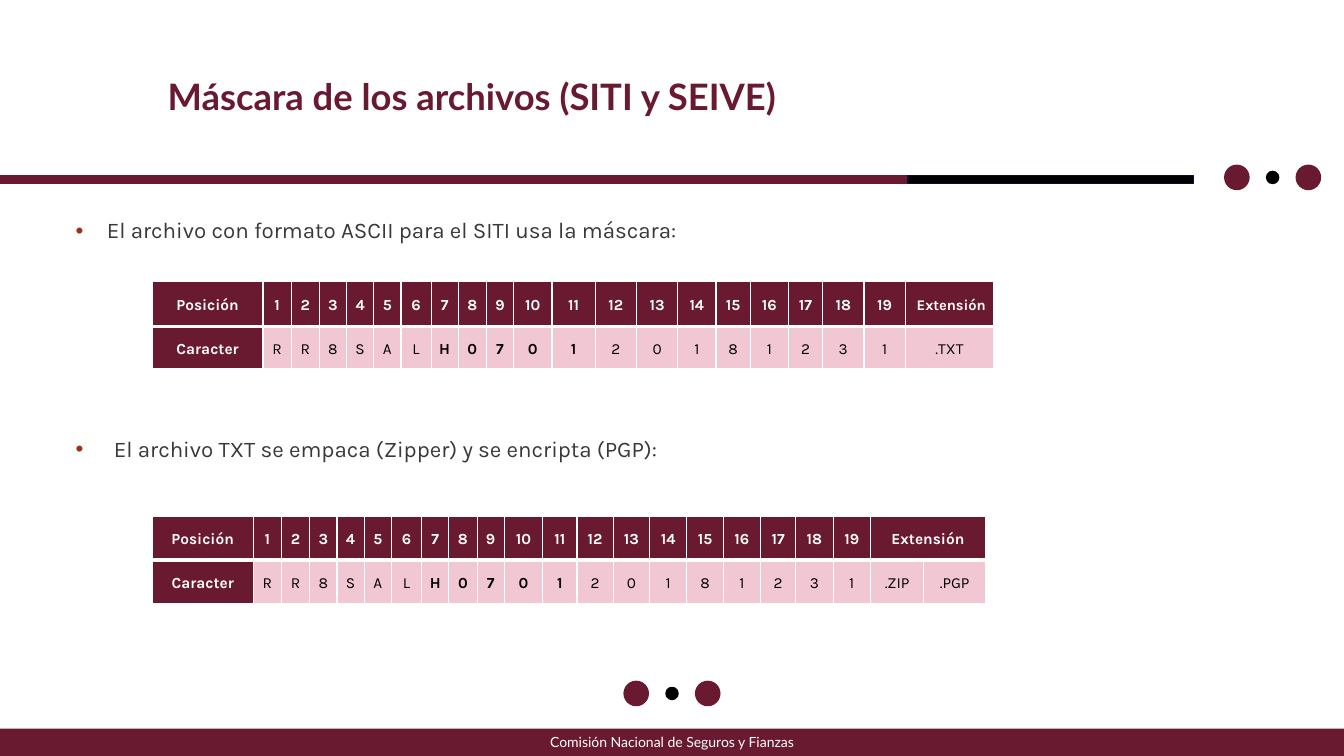
import pptx
import pptx.dml.color
import pptx.enum.shapes
import pptx.enum.text
import pptx.oxml
import pptx.oxml.ns
import pptx.util

WINE = pptx.dml.color.RGBColor(0x69, 0x1A, 0x31)
PINK = pptx.dml.color.RGBColor(0xF1, 0xC7, 0xD3)
RUST = pptx.dml.color.RGBColor(0x9E, 0x30, 0x1A)
GRAY = pptx.dml.color.RGBColor(0x3B, 0x38, 0x38)
NAVY = pptx.dml.color.RGBColor(0x0B, 0x0F, 0x2B)
BLACK = pptx.dml.color.RGBColor(0, 0, 0)
WHITE = pptx.dml.color.RGBColor(255, 255, 255)

Pt = pptx.util.Pt
ALIGN = pptx.enum.text.PP_ALIGN
MIDDLE = pptx.enum.text.MSO_ANCHOR.MIDDLE
RECTANGLE = pptx.enum.shapes.MSO_SHAPE.RECTANGLE
OVAL = pptx.enum.shapes.MSO_SHAPE.OVAL
NAMESPACE = pptx.oxml.ns.nsdecls("a")

presentation = pptx.Presentation()
presentation.slide_width = pptx.util.Inches(13.333)
presentation.slide_height = pptx.util.Inches(7.5)
slide = presentation.slides.add_slide(presentation.slide_layouts[6])


def area(left, top, width, height):
    """Turn percentages of the slide's width and height into lengths."""
    across, down = presentation.slide_width / 100, presentation.slide_height / 100
    return [round(v) for v in (left * across, top * down, width * across, height * down)]


def write(paragraph, text, color, font, layout):
    """Fill a paragraph with one run, given its font and paragraph formats."""
    run = paragraph.add_run()
    run.text = text
    run.font.color.rgb = color
    for target, formats in ((run.font, font), (paragraph, layout)):
        for name, value in formats.items():
            setattr(target, name, value)


# Title
title = slide.shapes.add_textbox(*area(2.18, 7.73, 65.93, 9.87)).text_frame
title.word_wrap = True
title.vertical_anchor = MIDDLE
write(title.paragraphs[0], "Máscara de los archivos (SITI y SEIVE)", WINE,
      {"name": "Lato", "size": Pt(26), "bold": True}, {"alignment": ALIGN.CENTER})

# Bulleted statements, one above each table
body = slide.shapes.add_textbox(*area(4.88, 28.4, 89.03, 58.4)).text_frame
body.word_wrap = True
statements = [
    ("El archivo con formato ASCII para el SITI usa la máscara:", 10, 0.31),
    ("El archivo TXT se empaca (Zipper) y se encripta (PGP):", 139, 0.38),
]
for index, (text, space_before, indent) in enumerate(statements):
    paragraph = body.add_paragraph() if index else body.paragraphs[0]
    write(paragraph, text, GRAY, {"name": "Karla", "size": Pt(16)},
          {"alignment": ALIGN.JUSTIFY, "line_spacing": 0.9, "space_before": Pt(space_before)})
    properties = paragraph._p.get_or_add_pPr()
    properties.set("marL", str(pptx.util.Inches(indent)))
    properties.set("indent", str(-pptx.util.Inches(indent)))
    for bullet in (f'<a:buClr {NAMESPACE}><a:srgbClr val="{RUST}"/></a:buClr>',
                   f'<a:buFont {NAMESPACE} typeface="Arial"/>',
                   f'<a:buChar {NAMESPACE} char="•"/>'):
        properties.append(pptx.oxml.parse_xml(bullet))

# File mask tables
CHARACTERS = "RR8SALH070120181231"
BOLD_COLUMNS = range(7, 12)
positions = [str(number + 1) for number in range(len(CHARACTERS))]
first_weights = [1.1, .28, .28, .27, .27, .27, .3, .27, .28, .27, .38,
                 .43, .41, .41, .38, .34, .38, .34, .41, .41, .88]
second_weights = [1, .28, .28, .27, .27, .27, .3, .27, .28, .27, .38,
                  .34, .36, .36, .37, .36, .37, .35, .37, .37, .53, .61]
masks = [
    (area(11.33, 37.2, 62.63, 11.6), first_weights, (45, 42), " Extensión", 10.5, [".TXT"], 10),
    (area(11.33, 68.27, 62.03, 11.6), second_weights, (43, 43), "Extensión", 11, [".ZIP", ".PGP"], 6),
]
for box, weights, row_weights, heading, heading_size, extensions, extension_after in masks:
    table = slide.shapes.add_table(2, len(weights), *box).table
    table.first_row = table.horz_banding = False
    for lines, shares, name, total in ((table.columns, weights, "width", box[2]),
                                       (table.rows, row_weights, "height", box[3])):
        for line, share in zip(lines, shares):
            setattr(line, name, round(total * share / sum(shares)))
    extension_column = len(CHARACTERS) + 1
    if len(extensions) > 1:
        table.cell(0, extension_column).merge(table.cell(0, len(weights) - 1))

    rows = [["Posición", *positions, heading] + [""] * (len(extensions) - 1),
            ["Caracter", *CHARACTERS, *extensions]]
    for row, texts in enumerate(rows):
        for column, text in enumerate(texts):
            cell = table.cell(row, column)
            is_heading = row == 0 or column == 0
            is_extension = column >= extension_column
            cell_formats = {"vertical_anchor": MIDDLE, "margin_top": 0, "margin_bottom": 0,
                            "margin_left": pptx.util.Inches(0.05),
                            "margin_right": pptx.util.Inches(0.05)}
            for name, value in cell_formats.items():
                setattr(cell, name, value)
            cell.fill.solid()
            cell.fill.fore_color.rgb = WINE if is_heading else PINK
            for order, side in enumerate("LRTB"):
                width = Pt(3 if row == 0 and side == "B" else 1)
                cell._tc.get_or_add_tcPr().insert(order, pptx.oxml.parse_xml(
                    f'<a:ln{side} {NAMESPACE} w="{width}"><a:solidFill>'
                    f'<a:srgbClr val="{WHITE}"/></a:solidFill></a:ln{side}>'))
            if not text:
                continue
            layout = {"alignment": ALIGN.CENTER, "line_spacing": 1.15, "space_after": Pt(10)}
            if row == 1 and is_extension:
                layout.update(space_before=Pt(6), space_after=Pt(extension_after))
            size = heading_size if row == 0 and is_extension else 11
            write(cell.text_frame.paragraphs[0], text, WHITE if is_heading else BLACK,
                  {"name": "Karla", "size": Pt(size),
                   "bold": is_heading or column in BOLD_COLUMNS}, layout)

# Footer band, divider bar and dot trios
footer_group = slide.shapes
divider_group = slide.shapes.add_group_shape().shapes
ornaments = [
    (footer_group, RECTANGLE, area(0, 96.4, 100, 3.6), WINE, None),
    (divider_group, RECTANGLE, area(0, 23.2, 67.5, 1.07), WINE, WINE),
    (divider_group, RECTANGLE, area(67.57, 23.2, 21.23, 1.07), BLACK, NAVY),
]
DOT_PITCH = 2.66
ASPECT = presentation.slide_width / presentation.slide_height
for center_x, center_y in ((94.69, 23.47), (50, 91.73)):
    dot_group = slide.shapes.add_group_shape().shapes
    for step, diameter, color in ((-1, 1.8, WINE), (0, 0.9, BLACK), (1, 1.8, WINE)):
        height = diameter * ASPECT
        box = area(center_x + step * DOT_PITCH - diameter / 2, center_y - height / 2,
                   diameter, height)
        ornaments.append((dot_group, OVAL, box, color, color))

for group, kind, box, fill, line in ornaments:
    shape = group.add_shape(kind, *box)
    shape.shadow.inherit = False
    shape.fill.solid()
    shape.fill.fore_color.rgb = fill
    if line is None:
        shape.line.fill.background()
        shape.text_frame.vertical_anchor = MIDDLE
        write(shape.text_frame.paragraphs[0], "Comisión Nacional de Seguros y Fianzas", WHITE,
              {"name": "Lato", "size": Pt(10)}, {"alignment": ALIGN.CENTER})
    else:
        shape.line.color.rgb = line
        shape.line.width = Pt(1)

presentation.save("out.pptx")
